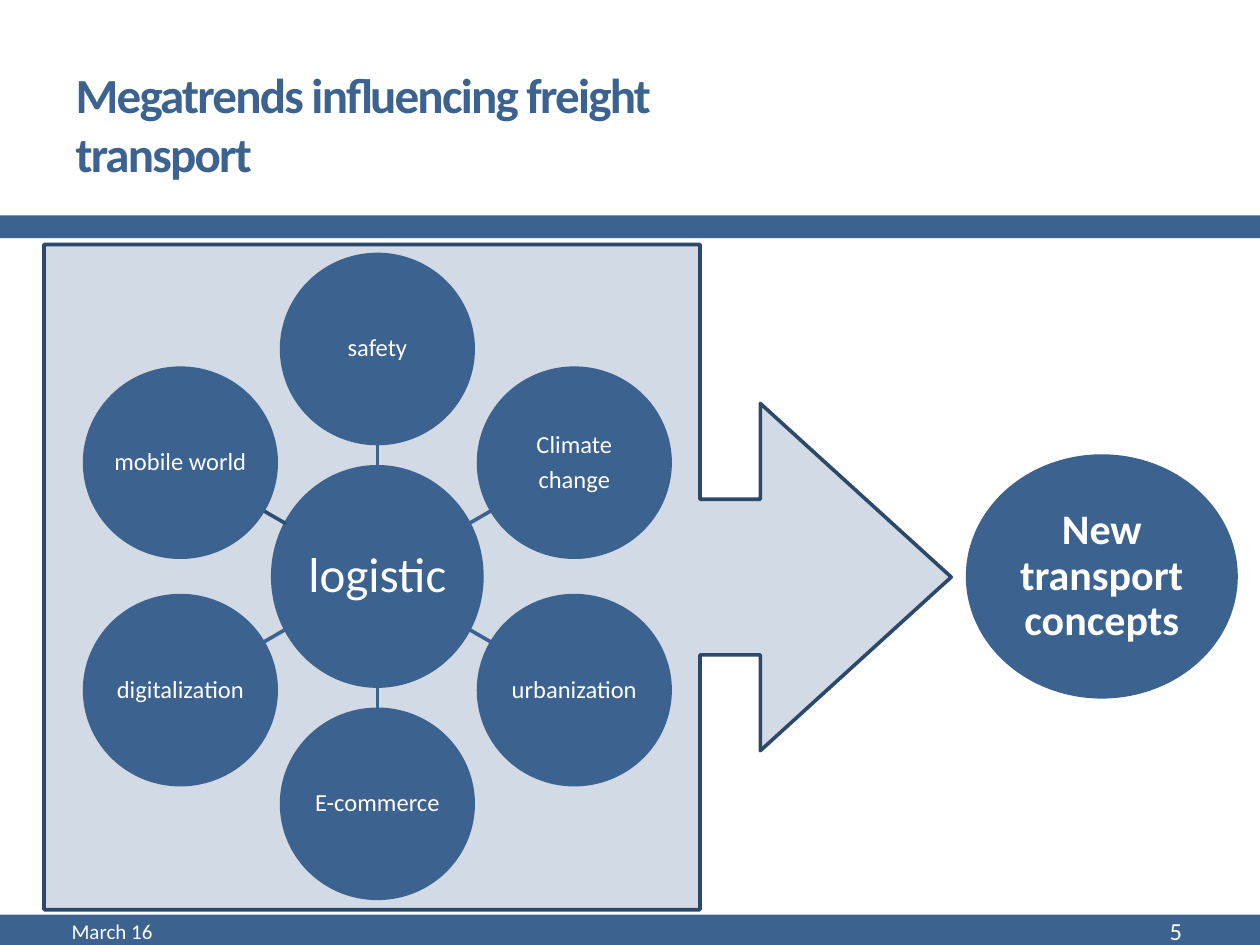
from dataclasses import dataclass
from math import cos, hypot, radians, sin

from lxml import etree
from pptx import Presentation
from pptx.dml.color import RGBColor
from pptx.enum.shapes import MSO_CONNECTOR, MSO_SHAPE
from pptx.enum.text import MSO_ANCHOR, PP_ALIGN
from pptx.oxml.ns import qn
from pptx.util import Inches, Pt

LEFT, CENTER, RIGHT = PP_ALIGN.LEFT, PP_ALIGN.CENTER, PP_ALIGN.RIGHT
MIDDLE = MSO_ANCHOR.MIDDLE
RECTANGLE, OVAL = MSO_SHAPE.RECTANGLE, MSO_SHAPE.OVAL
CALLOUT = MSO_SHAPE.RIGHT_ARROW_CALLOUT
STRAIGHT = MSO_CONNECTOR.STRAIGHT


@dataclass(frozen=True)
class Theme:
    font: str = "Calibri"
    blue: RGBColor = RGBColor(0x3C, 0x62, 0x8F)
    outline: RGBColor = RGBColor(0x2C, 0x49, 0x6A)
    dark_spoke: RGBColor = RGBColor(0x30, 0x4E, 0x73)
    white: RGBColor = RGBColor(0xFF, 0xFF, 0xFF)
    heading: int = 28
    result: int = 24
    label: int = 14
    date: int = 12
    line: float = 2.08
    callout_opacity: int = 23


THEME = Theme()
# Clockwise from the top
TRENDS = ["safety", "Climate\nchange", "urbanization", "E-commerce",
          "digitalization", "mobile world"]


def write_text(shape, text, size, color=THEME.white, bold=False, align=CENTER,
               inset=None, line_spacing=None, space_after=0, tracking=None):
    frame = shape.text_frame
    frame.word_wrap = True
    frame.vertical_anchor = MIDDLE
    if inset is not None:
        frame.margin_left = frame.margin_right = Inches(inset)
        frame.margin_top = frame.margin_bottom = Inches(inset)
    frame.text = text
    for paragraph in frame.paragraphs:
        paragraph.alignment = align
        paragraph.line_spacing = line_spacing
        paragraph.space_after = Pt(space_after)
        for run in paragraph.runs:
            run.font.name = THEME.font
            run.font.size = Pt(size)
            run.font.bold = bold
            run.font.color.rgb = color
            if tracking is not None:
                run.font._element.set("spc", str(tracking * 100))


def add_filled_shape(slide, kind, box, line_color=None):
    shape = slide.shapes.add_shape(kind, *map(Inches, box))
    shape.shadow.inherit = False
    shape.fill.solid()
    shape.fill.fore_color.rgb = THEME.blue
    if line_color is None:
        shape.line.fill.background()
    else:
        shape.line.color.rgb = line_color
        shape.line.width = Pt(THEME.line)
    return shape


def add_circle(slide, center, radii, text, size, bold=False):
    (x, y), (radius_x, radius_y) = center, radii
    box = (x - radius_x, y - radius_y, 2 * radius_x, 2 * radius_y)
    circle = add_filled_shape(slide, OVAL, box, THEME.blue)
    write_text(circle, text, size, bold=bold, inset=0.01,
               line_spacing=0.9, space_after=0.35 * size)


def add_spoke(slide, start, end, color):
    spoke = slide.shapes.add_connector(STRAIGHT, *map(Inches, (*start, *end)))
    spoke.line.color.rgb = color
    spoke.line.width = Pt(THEME.line)
    etree.SubElement(spoke._element.spPr, qn("a:effectLst"))


def point_at(center, angle, distance):
    return (center[0] + distance * cos(angle),
            center[1] + distance * sin(angle))


def edge_distance(radii, angle):
    """Distance from the centre of an ellipse to its edge at an angle."""
    return 1 / hypot(cos(angle) / radii[0], sin(angle) / radii[1])


def add_header(slide, box):
    left, top, width, height = box
    add_filled_shape(slide, RECTANGLE, (left, top + height - 0.18, width, 0.18))
    title = slide.shapes.title
    title.left, title.top = Inches(left + 0.5), Inches(top + 0.44)
    title.width, title.height = Inches(5.21), Inches(1.08)
    write_text(title, "Megatrends influencing freight transport", THEME.heading,
               color=THEME.blue, bold=True, align=LEFT, tracking=-1)


def add_footer(slide, box):
    left, top, width, _ = box
    add_filled_shape(slide, RECTANGLE, box)
    entries = [(left + 0.47, 3.17, "March 16", THEME.date, LEFT),
               (left + width - 1.69, 1.17, "5", THEME.label, RIGHT)]
    for x, entry_width, text, size, align in entries:
        text_box = slide.shapes.add_textbox(
            Inches(x), Inches(top - 0.05), Inches(entry_width), Inches(0.36))
        write_text(text_box, text, size, align=align)


def add_callout(slide, box):
    callout = add_filled_shape(slide, CALLOUT, box, THEME.outline)
    for index, value in enumerate((0.234, 0.261, 0.287, 0.723)):
        callout.adjustments[index] = value
    color = callout.fill._xPr.find(qn("a:solidFill"))[0]
    etree.SubElement(color, qn("a:alpha"),
                     val=str(THEME.callout_opacity * 1000))


def add_trend_wheel(slide, box):
    left, top, width, height = box
    hub = (left + width / 2, top + height / 2)
    hub_radii, trend_radii = (0.83, 0.87), (0.76, 0.75)
    orbit = height / 2 - trend_radii[1]

    add_circle(slide, hub, hub_radii, "logistic", THEME.heading)
    for index, trend in enumerate(TRENDS):
        angle = radians(index * 360 / len(TRENDS) - 90)
        start = point_at(hub, angle, edge_distance(hub_radii, angle))
        end = point_at(hub, angle, orbit - edge_distance(trend_radii, angle))
        is_last = index == len(TRENDS) - 1
        add_spoke(slide, start, end,
                  THEME.dark_spoke if is_last else THEME.blue)
        add_circle(slide, point_at(hub, angle, orbit), trend_radii, trend,
                   THEME.label)


def add_result(slide, box):
    left, top, width, height = box
    add_circle(slide, (left + width / 2, top + height / 2),
               (width / 2, height / 2), "New transport concepts",
               THEME.result, bold=True)


def main():
    presentation = Presentation()
    presentation.slide_width = Inches(10)
    presentation.slide_height = Inches(7.5)
    slide = presentation.slides.add_slide(presentation.slide_layouts[5])
    add_header(slide, (0, 0, 10, 1.89))
    add_footer(slide, (0, 7.26, 10, 0.24))
    add_callout(slide, (0.35, 1.94, 7.2, 5.28))
    add_trend_wheel(slide, (0.67, 2.02, 4.65, 5.11))
    add_result(slide, (7.68, 3.62, 2.13, 1.91))
    presentation.save("out.pptx")


if __name__ == "__main__":
    main()
